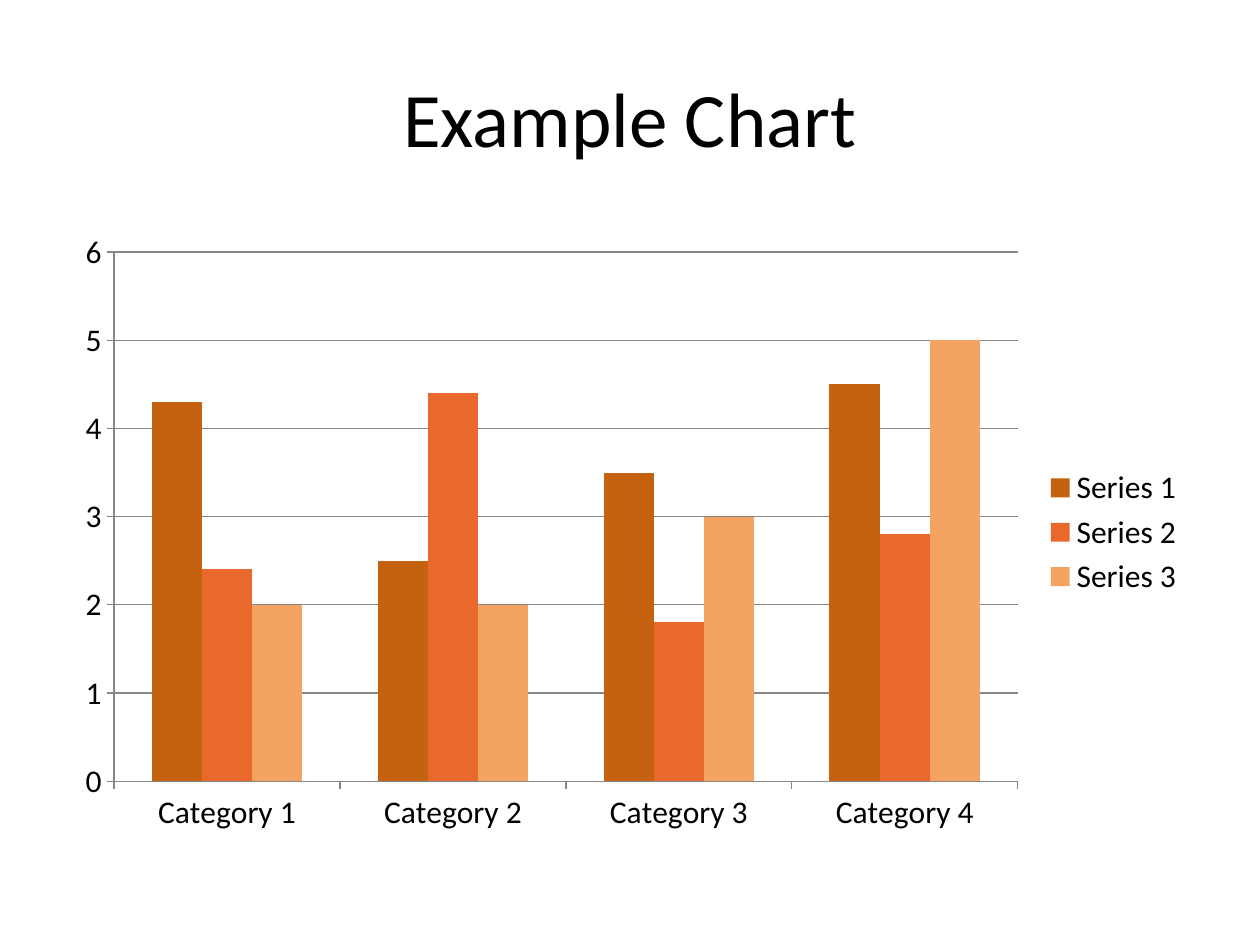
from dataclasses import dataclass

from pptx import Presentation
from pptx.chart.data import CategoryChartData
from pptx.dml.color import RGBColor
from pptx.enum import chart as ch, text
from pptx.util import Inches, Pt


@dataclass(frozen=True)
class Theme:
    font: str = "Calibri"
    title_size: int = 44
    chart_size: int = 18
    ink: str = "000000"
    line: str = "878787"
    series: tuple = ("C46210", "E9692C", "F4A460")


THEME = Theme()

CATEGORIES = ["Category 1", "Category 2", "Category 3", "Category 4"]
SERIES = {
    "Series 1": (4.3, 2.5, 3.5, 4.5),
    "Series 2": (2.4, 4.4, 1.8, 2.8),
    "Series 3": (2, 2, 3, 5),
}


def set_font(font, size):
    font.name = THEME.font
    font.size = Pt(size)
    font.color.rgb = RGBColor.from_string(THEME.ink)


def set_line(line):
    line.color.rgb = RGBColor.from_string(THEME.line)
    line.width = Pt(0.75)


def add_title(slide, title, left, top, width, height):
    tf = slide.shapes.add_textbox(left, top, width, height).text_frame
    tf.word_wrap = True
    tf.vertical_anchor = text.MSO_ANCHOR.MIDDLE
    p = tf.paragraphs[0]
    p.text = title
    p.alignment = text.PP_ALIGN.CENTER
    set_font(p.font, THEME.title_size)


def add_column_chart(slide, left, top, width, height):
    data = CategoryChartData()
    data.categories = CATEGORIES
    for name, values in SERIES.items():
        data.add_series(name, values)
    chart = slide.shapes.add_chart(
        ch.XL_CHART_TYPE.COLUMN_CLUSTERED, left, top, width, height, data
    ).chart
    chart.has_title = False
    set_font(chart.font, THEME.chart_size)

    # Columns
    plot = chart.plots[0]
    plot.vary_by_categories = False
    plot.gap_width = 150
    plot.overlap = 0
    for series, color in zip(plot.series, THEME.series):
        series.format.fill.solid()
        series.format.fill.fore_color.rgb = RGBColor.from_string(color)

    # Axes and gridlines
    for axis in (chart.category_axis, chart.value_axis):
        axis.major_tick_mark = ch.XL_TICK_MARK.OUTSIDE
        axis.minor_tick_mark = ch.XL_TICK_MARK.NONE
        set_line(axis.format.line)
    chart.value_axis.has_major_gridlines = True
    set_line(chart.value_axis.major_gridlines.format.line)

    # Legend
    chart.has_legend = True
    chart.legend.position = ch.XL_LEGEND_POSITION.RIGHT
    chart.legend.include_in_layout = False


def main():
    prs = Presentation()
    prs.slide_width, prs.slide_height = Inches(10), Inches(7.5)
    slide = prs.slides.add_slide(prs.slide_layouts[6])
    add_title(slide, "Example Chart",
              Inches(0.5), Inches(0.3), Inches(9), Inches(1.25))
    add_column_chart(slide, Inches(0.5), Inches(1.75), Inches(9), Inches(4.95))
    prs.save("out.pptx")


if __name__ == "__main__":
    main()
